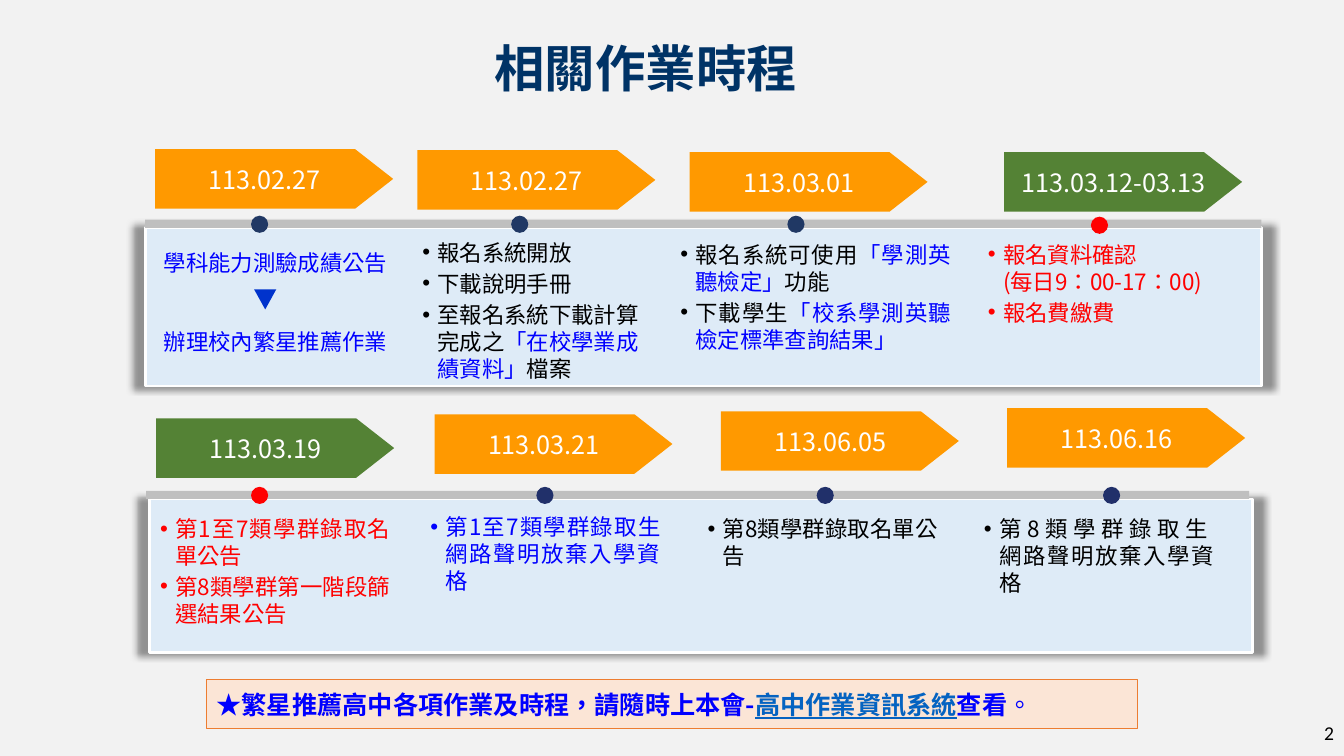
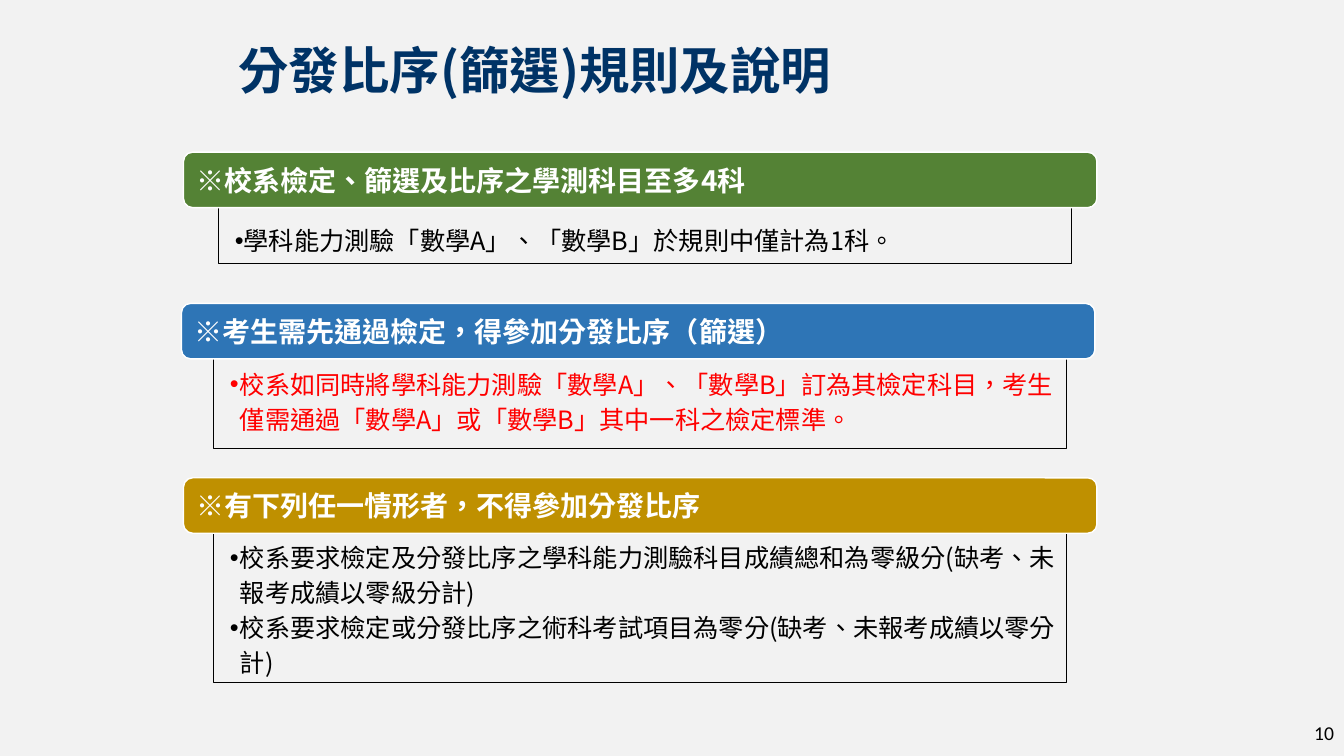
import pptx
import pptx.util
import pptx.dml.color
import pptx.enum.shapes
import pptx.enum.text
import pptx.oxml
import pptx.oxml.ns
import lxml.etree

Inches, Pt = pptx.util.Inches, pptx.util.Pt
SHAPE = pptx.enum.shapes.MSO_SHAPE
ALIGN = pptx.enum.text.PP_ALIGN
ANCHOR = pptx.enum.text.MSO_ANCHOR
qn = pptx.oxml.ns.qn

FONT = "Noto Sans CJK SC"
COLORS = {
    "background": "F2F2F2", "title": "003366", "black": "000000", "white": "FFFFFF",
    "red": "FF0000", "blue": "0000FF", "link": "0563C1", "arrow": "0033CC",
    "panel": "DEEBF7", "rail": "BFBFBF", "navy": "203864", "indigo": "21306A",
    "orange": "FF9900", "green": "548235", "azure": "2E75B6", "gold": "BF9000",
    "notice": "FBE5D6", "notice_line": "ED7D31",
}


def rgb(name):
    return pptx.dml.color.RGBColor.from_string(COLORS[name])


# ---- Shared helpers ----
def style_run(run, size, color, bold=False, font=FONT):
    run.font.size, run.font.bold, run.font.name = Pt(size), bold, font
    run.font.color.rgb = rgb(color)
    properties = run.font._element
    properties.set("lang", "zh-TW")
    latin = properties.find(qn("a:latin"))
    east_asian = lxml.etree.Element(qn("a:ea"), typeface=font)
    latin.addnext(east_asian)


def add_bullet(paragraph, indent):
    properties = paragraph._p.get_or_add_pPr()
    properties.set("marL", str(Inches(indent)))
    properties.set("indent", str(-Inches(indent)))
    lxml.etree.SubElement(properties, qn("a:buFont"), typeface="Arial")
    lxml.etree.SubElement(properties, qn("a:buChar"), char="•")


def fill_text(frame, paragraphs, size, color, align=ALIGN.LEFT, bold=False, bullet=None,
              gap=0, leading=None, anchor=ANCHOR.TOP, insets=(.1, .05, .1, .05),
              wrap=True, font=FONT):
    """Each paragraph is a string or a list of (text, colour) parts."""
    frame.word_wrap, frame.vertical_anchor = wrap, anchor
    (frame.margin_left, frame.margin_top,
     frame.margin_right, frame.margin_bottom) = map(Inches, insets)
    for index, parts in enumerate(paragraphs):
        paragraph = frame.add_paragraph() if index else frame.paragraphs[0]
        paragraph.alignment = align
        if index and gap:
            paragraph.space_before = Pt(gap)
        if leading:
            paragraph.line_spacing = leading
        if bullet is not None:
            add_bullet(paragraph, bullet)
        if isinstance(parts, str):
            parts = [(parts, color)]
        for text, part_color in parts:
            for number, line in enumerate(text.split("\n")):
                if number:
                    paragraph.add_line_break()
                run = paragraph.add_run()
                run.text = line
                style_run(run, size, part_color, bold, font)


def add_box(slide, kind, box, fill=None, line=None, line_width=1):
    shape = slide.shapes.add_shape(kind, *map(Inches, box))
    shape.shadow.inherit = False
    if fill:
        shape.fill.solid()
        shape.fill.fore_color.rgb = rgb(fill)
    else:
        shape.fill.background()
    if line:
        shape.line.color.rgb = rgb(line)
        shape.line.width = Pt(line_width)
    else:
        shape.line.fill.background()
    return shape


def add_text(slide, box, paragraphs, size, color, **options):
    holder = slide.shapes.add_textbox(*map(Inches, box))
    fill_text(holder.text_frame, paragraphs, size, color, **options)


def add_slide(deck, title, title_box, number):
    slide = deck.slides.add_slide(deck.slide_layouts[5])
    slide.background.fill.solid()
    slide.background.fill.fore_color.rgb = rgb("background")
    heading = slide.shapes.title
    heading.left, heading.top, heading.width, heading.height = map(Inches, title_box)
    fill_text(heading.text_frame, [title], 36, "title", align=ALIGN.CENTER, bold=True,
              anchor=ANCHOR.MIDDLE, insets=(.13, .07, .13, .07))
    add_text(slide, (10.33, 7.1, 3, .4), [number], 14, "black",
             align=ALIGN.RIGHT, font="Calibri")
    return slide


# ---- Schedule slide ----
def add_panel(slide, box, rail_left):
    left, top, width, height = box
    panel = add_box(slide, SHAPE.RECTANGLE, box, "panel", "white", 2)
    effects = panel._element.spPr.find(qn("a:effectLst"))
    shadow = lxml.etree.SubElement(effects, qn("a:outerShdw"), blurRad="63500",
                                   sx="102000", sy="102000", algn="ctr", rotWithShape="0")
    shade = lxml.etree.SubElement(shadow, qn("a:srgbClr"), val=COLORS["black"])
    lxml.etree.SubElement(shade, qn("a:alpha"), val="40000")
    add_box(slide, SHAPE.RECTANGLE, (rail_left, top - .08, width, .08), "rail")


def add_milestone(slide, date, flag_at, flag_color, dot_at, dot_color):
    flag = add_box(slide, SHAPE.PENTAGON, (*flag_at, 2.36, .59), flag_color)
    flag.adjustments[0] = .639
    fill_text(flag.text_frame, [date], 18, "white", align=ALIGN.CENTER,
              anchor=ANCHOR.MIDDLE, wrap=False)
    add_box(slide, SHAPE.OVAL, (*dot_at, .17, .17), dot_color)


def add_score_steps(slide, left, top):
    for offset, step in ((0, "學科能力測驗成績公告"), (.79, "辦理校內繁星推薦作業")):
        add_text(slide, (left, top + offset, 2.27, .3), [step], 16, "blue",
                 align=ALIGN.CENTER, anchor=ANCHOR.MIDDLE, insets=(0, 0, 0, 0), wrap=False)
    pointer = add_box(slide, SHAPE.ISOSCELES_TRIANGLE,
                      (left + .92, top + .42, .22, .2), "arrow")
    pointer.rotation = 180


def add_notice(slide, box):
    notice = add_box(slide, SHAPE.RECTANGLE, box, "notice", "notice_line", .5)
    fill_text(notice.text_frame,
              [[("★繁星推薦高中各項作業及時程，請隨時上本會-", "blue"),
                ("高中作業資訊系統", "link"), ("查看", "blue"), ("。", "blue")]],
              18, "blue", bold=True, anchor=ANCHOR.MIDDLE)
    runs = notice.text_frame.paragraphs[0].runs
    runs[1].font.underline = True
    runs[-1].font.bold = False


def build_schedule(deck):
    slide = add_slide(deck, "相關作業時程", (4.25, .18, 4.31, .97), "2")
    add_panel(slide, (1.44, 2.26, 11.07, 1.57), 1.44)
    add_panel(slide, (1.48, 4.95, 10.94, 1.52), 1.45)

    # Dates: text, flag position and colour, dot position and colour
    for milestone in (
        ("113.02.27", (1.54, 1.48), "orange", (2.49, 2.14), "navy"),
        ("113.02.27", (4.14, 1.49), "orange", (5.07, 2.14), "navy"),
        ("113.03.01", (6.84, 1.51), "orange", (7.81, 2.14), "navy"),
        ("113.03.12-03.13", (9.96, 1.51), "green", (10.82, 2.15), "red"),
        ("113.03.19", (1.55, 4.15), "green", (2.49, 4.83), "red"),
        ("113.03.21", (4.31, 4.11), "orange", (5.32, 4.83), "indigo"),
        ("113.06.05", (7.15, 4.08), "orange", (8.1, 4.83), "indigo"),
        ("113.06.16", (9.99, 4.05), "orange", (10.94, 4.83), "indigo"),
    ):
        add_milestone(slide, *milestone)

    # Tasks under each date
    add_score_steps(slide, 1.6, 2.45)
    left, justify = ALIGN.LEFT, ALIGN.JUSTIFY
    for box, color, align, tasks in (
        ((4.09, 2.32, 2.51, 1.53), "black", left,
         ["報名系統開放", "下載說明手冊",
          [("至報名系統下載計算完成之", "black"), ("「在校學業成績資料」", "blue"),
           ("檔案", "black")]]),
        ((6.65, 2.34, 2.88, 1.49), "black", justify,
         [[("報名系統可使用", "black"), ("「學測英聽檢定」", "blue"), ("功能", "black")],
          [("下載學生", "black"), ("「校系學測英聽檢定標準查詢結果」", "blue")]]),
        ((9.7, 2.34, 2.51, .95), "red", left,
         ["報名資料確認\n(每日9：00-17：00)", "報名費繳費"]),
        ((1.49, 5.06, 2.48, 1.26), "red", justify,
         ["第1至7類學群錄取名單公告", "第8類學群第一階段篩選結果公告"]),
        ((4.17, 5.04, 2.48, .91), "blue", justify,
         ["第1至7類學群錄取生網路聲明放棄入學資格"]),
        ((6.92, 5.06, 2.48, .64), "black", justify, ["第8類學群錄取名單公告"]),
        ((9.66, 5.06, 2.48, .91), "black", justify,
         ["第8類學群錄取生\n網路聲明放棄入學資格"]),
    ):
        add_text(slide, box, tasks, 16, color, align=align, bullet=.15, gap=3)
    add_notice(slide, (2.05, 6.74, 9.23, .49))


# ---- Rules slide ----
def add_rule(slide, header_at, header, header_color, details_box, details, **options):
    frame = add_box(slide, SHAPE.RECTANGLE, details_box, line="black", line_width=.75)
    fill_text(frame.text_frame, details, 18, **options)
    band = add_box(slide, SHAPE.ROUNDED_RECTANGLE, (*header_at, 9.06, .55),
                   header_color, "white")
    fill_text(band.text_frame, [header], 20, "white", bold=True, anchor=ANCHOR.MIDDLE)


def build_rules(deck):
    slide = add_slide(deck, "分發比序(篩選)規則及說明", (2.02, .29, 6.57, .79), "10")
    add_rule(slide, (1.82, 1.51), "※校系檢定、篩選及比序之學測科目至多4科", "green",
             (2.17, 1.92, 8.46, .69),
             ["學科能力測驗「數學A」、「數學B」於規則中僅計為1科。"],
             color="black", bullet=0, anchor=ANCHOR.MIDDLE, insets=(.16, .36, .31, .12))
    add_rule(slide, (1.8, 3.01), "※考生需先通過檢定，得參加分發比序（篩選）", "azure",
             (2.12, 3.47, 8.46, .98),
             ["校系如同時將學科能力測驗「數學A」、「數學B」訂為其檢定科目，"
              "考生僅需通過「數學A」或「數學B」其中一科之檢定標準。"],
             color="red", bullet=.1, leading=Pt(25), anchor=ANCHOR.MIDDLE,
             insets=(.16, .05, .04, .05))
    add_rule(slide, (1.82, 4.74), "※有下列任一情形者，不得參加分發比序", "gold",
             (2.12, 5.16, 8.46, 1.61),
             ["校系要求檢定及分發比序之學科能力測驗科目成績總和為零級分"
              "(缺考、未報考成績以零級分計)",
              "校系要求檢定或分發比序之術科考試項目為零分(缺考、未報考成績以零分計)"],
             color="black", bullet=.1, leading=Pt(25), anchor=ANCHOR.BOTTOM,
             insets=(.16, .05, .1, .05))


def main():
    deck = pptx.Presentation()
    deck.slide_width, deck.slide_height = Inches(13.33), Inches(7.5)
    build_schedule(deck)
    build_rules(deck)
    deck.save("out.pptx")


if __name__ == "__main__":
    main()
